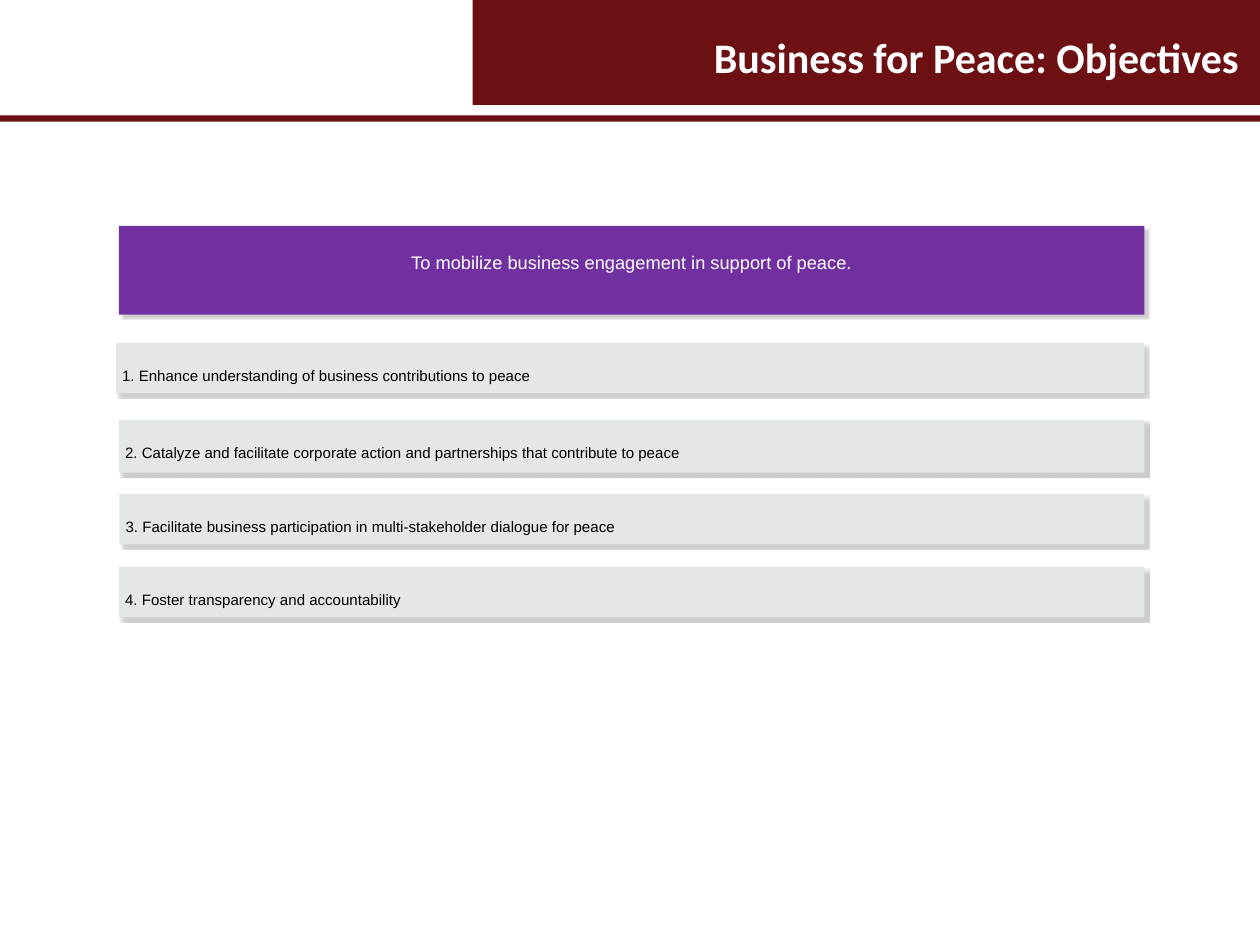
from lxml.etree import SubElement
from pptx import Presentation
from pptx.dml.color import RGBColor
from pptx.enum.shapes import MSO_SHAPE
from pptx.enum.text import MSO_ANCHOR, PP_ALIGN
from pptx.oxml.ns import qn
from pptx.util import Pt

# Content
TITLE = "Business for Peace: Objectives"
MISSION = "To mobilize business engagement in support of peace."
# text, left, top, height of the bar
OBJECTIVES = [
    ("1. Enhance understanding of business contributions to peace", 66.2, 196, 28.8),
    ("2. Catalyze and facilitate corporate action and partnerships that contribute to peace",
     67.9, 239.9, 30.2),
    ("3. Facilitate business participation in multi-stakeholder dialogue for peace",
     68.2, 282.3, 28.8),
    ("4. Foster transparency and accountability", 67.9, 324, 28.8),
]

# Style
MAROON = RGBColor(0x6D, 0x10, 0x14)
PURPLE = RGBColor(0x70, 0x30, 0xA0)
GREY = RGBColor(0xE4, 0xE7, 0xE7)
WHITE = RGBColor(0xFF, 0xFF, 0xFF)
BLACK = RGBColor(0x00, 0x00, 0x00)
PAGE_WIDTH, PAGE_HEIGHT = 720, 540
BAR_RIGHT = 654
LABEL_HEIGHT = 38.2
INSET = 3.6


def add_bar(shapes, left, top, width, height, color):
    bar = shapes.add_shape(MSO_SHAPE.RECTANGLE, Pt(left), Pt(top), Pt(width), Pt(height))
    bar.fill.solid()
    bar.fill.fore_color.rgb = color
    bar.line.fill.background()
    bar.shadow.inherit = False
    return bar


def add_shadow(bar):
    effects = bar._element.spPr.find(qn("a:effectLst"))
    shadow = SubElement(effects, qn("a:outerShdw"), blurRad=str(Pt(1)), dist=str(Pt(3)),
                        dir="2700000", algn="ctr", rotWithShape="0")
    color = SubElement(shadow, qn("a:srgbClr"), val="808080")
    SubElement(color, qn("a:alpha"), val="40000")


def add_label(shapes, text, left, top, width, height, size, color, font="Arial", bold=False,
              align=PP_ALIGN.LEFT, anchor=MSO_ANCHOR.MIDDLE, inset=INSET, spacing=None):
    box = shapes.add_textbox(Pt(left), Pt(top), Pt(width), Pt(height))
    frame = box.text_frame
    frame.word_wrap = True
    frame.vertical_anchor = anchor
    frame.margin_left = frame.margin_right = Pt(inset)
    frame.margin_top = frame.margin_bottom = Pt(inset)
    para = frame.paragraphs[0]
    para.alignment = align
    para.line_spacing = spacing
    span = para.add_run()
    span.text = text
    span.font.name = font
    span.font.size = Pt(size)
    span.font.bold = bold
    span.font.color.rgb = color
    return box


deck = Presentation()
deck.slide_width, deck.slide_height = Pt(PAGE_WIDTH), Pt(PAGE_HEIGHT)
page = deck.slides.add_slide(deck.slide_layouts[6])

# Header band, rule and title
add_bar(page.shapes, 270, 0, 450, 60, MAROON)
add_bar(page.shapes, 0, 66, PAGE_WIDTH, 3.6, MAROON)
add_label(page.shapes, TITLE, 60, 15, 648, 34.5, 24, WHITE, font="Calibri", bold=True,
          align=PP_ALIGN.RIGHT, inset=0)

# Mission bar
mission_left, mission_top = 67.9, 129.1
mission_width = BAR_RIGHT - mission_left
mission = page.shapes.add_group_shape()
add_shadow(add_bar(mission.shapes, mission_left, mission_top, mission_width, 50.7, PURPLE))
mission_label = add_label(mission.shapes, MISSION, mission_left, mission_top, mission_width, 27.4,
                          10.4, WHITE, align=PP_ALIGN.CENTER, anchor=MSO_ANCHOR.TOP)
mission_label.text_frame.margin_top = Pt(16)
mission_label.text_frame.margin_bottom = 0

# Objective bars
for text, left, top, height in OBJECTIVES:
    objective = page.shapes.add_group_shape()
    width = BAR_RIGHT - left
    add_shadow(add_bar(objective.shapes, left, top, width, height, GREY))
    add_label(objective.shapes, text, left, top, width, LABEL_HEIGHT, 8.6, BLACK, spacing=0.9)

deck.save("out.pptx")
